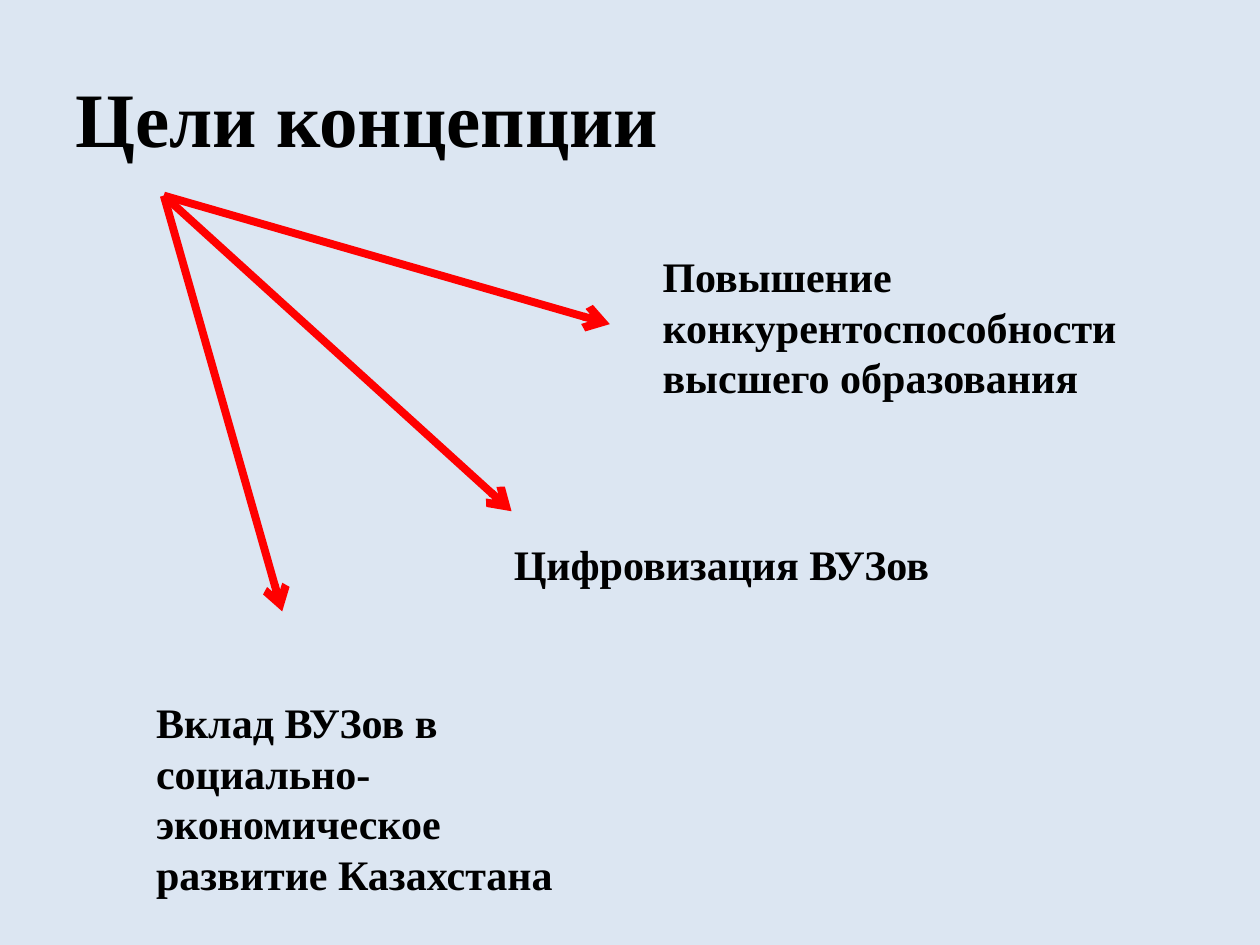
"""Build the slide on the goals of the concept: a title and three arrows to goals."""
from dataclasses import dataclass

import lxml.etree
import pptx
import pptx.dml.color
import pptx.enum.shapes
import pptx.enum.text
import pptx.oxml.ns
import pptx.util

WIDTH = pptx.util.Inches(10)
HEIGHT = pptx.util.Inches(7.5)
FONT = "Times New Roman"
BACKGROUND, TEXT, ARROW = "DCE6F2", "000000", "FF0000"
ORIGIN = (0.13, 0.207)


@dataclass(frozen=True)
class Label:
    """Bold text in a box given as shares of the slide's size."""

    text: str
    left: float
    top: float
    width: float
    height: float
    size: int = 24
    anchor: pptx.enum.text.MSO_ANCHOR = pptx.enum.text.MSO_ANCHOR.TOP


@dataclass(frozen=True)
class Goal:
    """A goal's label and the tip of the arrow that leads to it."""

    label: Label
    tip: tuple[float, float]


TITLE = Label("Цели концепции", 0.05, 0.04, 0.9, 0.167, 44, pptx.enum.text.MSO_ANCHOR.MIDDLE)
GOALS = [
    Goal(Label("Повышение конкурентоспособности высшего образования",
               0.516, 0.259, 0.402, 0.175), (0.484, 0.343)),
    Goal(Label("Цифровизация ВУЗов", 0.398, 0.563, 0.417, 0.067), (0.406, 0.541)),
    Goal(Label("Вклад ВУЗов в социально-экономическое развитие Казахстана",
               0.114, 0.731, 0.362, 0.229), (0.224, 0.647)),
]


def color(value: str) -> pptx.dml.color.RGBColor:
    """Turn a hex string into a colour."""
    return pptx.dml.color.RGBColor.from_string(value)


def place(across: float, down: float) -> tuple[int, int]:
    """Turn shares of the slide's size into lengths."""
    return round(WIDTH * across), round(HEIGHT * down)


def add_label(slide: pptx.slide.Slide, label: Label) -> None:
    """Draw a wrapped bold label."""
    shape = slide.shapes.add_textbox(*place(label.left, label.top), *place(label.width, label.height))
    frame = shape.text_frame
    frame.word_wrap = True
    frame.vertical_anchor = label.anchor
    paragraph = frame.paragraphs[0]
    paragraph.text = label.text
    paragraph.font.name = FONT
    paragraph.font.size = pptx.util.Pt(label.size)
    paragraph.font.bold = True
    paragraph.font.color.rgb = color(TEXT)


def add_arrow(slide: pptx.slide.Slide, tip: tuple[float, float]) -> None:
    """Draw an arrow from the common origin to a tip."""
    connector = slide.shapes.add_connector(
        pptx.enum.shapes.MSO_CONNECTOR.STRAIGHT, *place(*ORIGIN), *place(*tip))
    connector.line.color.rgb = color(ARROW)
    connector.line.width = pptx.util.Pt(4.5)
    qualify = pptx.oxml.ns.qn
    lxml.etree.SubElement(connector.line._get_or_add_ln(), qualify("a:tailEnd"), type="arrow")
    lxml.etree.SubElement(connector._element.spPr, qualify("a:effectLst"))


def main() -> None:
    """Build and save the presentation."""
    presentation = pptx.Presentation()
    presentation.slide_width, presentation.slide_height = WIDTH, HEIGHT
    slide = presentation.slides.add_slide(presentation.slide_layouts[6])
    slide.background.fill.solid()
    slide.background.fill.fore_color.rgb = color(BACKGROUND)
    for label in [TITLE, *(goal.label for goal in GOALS)]:
        add_label(slide, label)
    for goal in GOALS:
        add_arrow(slide, goal.tip)
    presentation.save("out.pptx")


if __name__ == "__main__":
    main()
